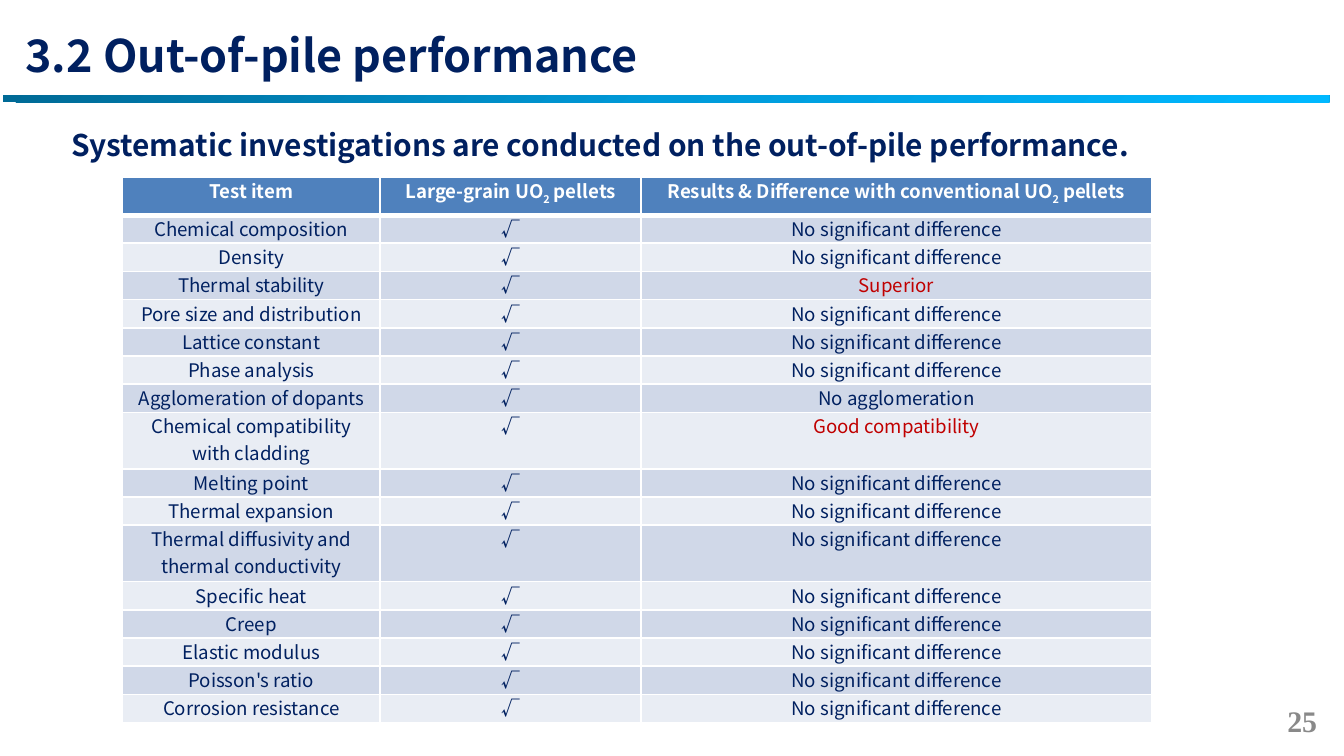
import pptx
import pptx.util
import pptx.dml.color
import pptx.enum.shapes
import pptx.enum.text
import pptx.oxml.ns
from lxml import etree

Inches = pptx.util.Inches
Pt = pptx.util.Pt
qn = pptx.oxml.ns.qn
ALIGN = pptx.enum.text.PP_ALIGN
ANCHOR = pptx.enum.text.MSO_ANCHOR

TITLE = "3.2 Out-of-pile performance"
SUBTITLE = "Systematic investigations are conducted on the out-of-pile performance."
PAGE_NUMBER = "25"
HEADERS = [
    ["Test item"],
    ["Large-grain UO", "2", " pellets"],
    ["Results & Difference with conventional UO", "2", " pellets"],
]
CHECK = "√"
SAME = "No significant difference"
RESULTS = [
    ("Chemical composition", SAME),
    ("Density", SAME),
    ("Thermal stability", "Superior"),
    ("Pore size and distribution", SAME),
    ("Lattice constant", SAME),
    ("Phase analysis", SAME),
    ("Agglomeration of dopants", "No agglomeration"),
    ("Chemical compatibility with cladding", "Good compatibility"),
    ("Melting point", SAME),
    ("Thermal expansion", SAME),
    ("Thermal diffusivity and thermal conductivity", SAME),
    ("Specific heat", SAME),
    ("Creep", SAME),
    ("Elastic modulus", SAME),
    ("Poisson's ratio", SAME),
    ("Corrosion resistance", SAME),
]
HIGHLIGHTS = {"Superior", "Good compatibility"}
SLIDE_WIDTH = 10
SLIDE_HEIGHT = SLIDE_WIDTH * 9 / 16
COLUMN_WIDTHS = [1.92, 1.94, 3.8]
HEADER_HEIGHT, LINE_HEIGHT, LINE_CHARACTERS = 0.28, 0.21, 30

THEME = {
    "font": "Noto Sans CJK SC",
    "number_font": "Times New Roman",
    "title_size": 24,
    "body_size": 16,
    "table_size": 10,
    "navy": "002060",
    "red": "C00000",
    "gray": "898989",
    "white": "FFFFFF",
    "header": "4F81BD",
    "bands": ["D0D8E8", "E9EDF4"],
    "bar": [(0, "006A96"), (50, "009AD9"), (100, "00B8FF")],
}


def color(value):
    return pptx.dml.color.RGBColor.from_string(value)


def style(paragraph, size, fill, bold=False, font=THEME["font"], align=ALIGN.LEFT):
    paragraph.alignment = align
    paragraph.font.size = Pt(size)
    paragraph.font.name = font
    paragraph.font.bold = bold
    paragraph.font.color.rgb = color(fill)
    properties = paragraph.font._element
    etree.SubElement(properties, qn("a:ea")).set("typeface", font)


def add_text(slide, box, text, insets, anchor=ANCHOR.TOP, spacing=None, **look):
    frame = slide.shapes.add_textbox(*map(Inches, box)).text_frame
    frame.word_wrap = True
    frame.vertical_anchor = anchor
    frame.margin_left = frame.margin_right = Inches(insets[0])
    frame.margin_top = frame.margin_bottom = Inches(insets[1])
    paragraph = frame.paragraphs[0]
    paragraph.text = text
    if spacing:
        paragraph.line_spacing = spacing
    style(paragraph, **look)


def add_bar(slide):
    shape = slide.shapes.add_shape(
        pptx.enum.shapes.MSO_SHAPE.RECTANGLE, *map(Inches, (0.02, 0.71, 9.87, 0.05)))
    shape.shadow.inherit = False
    shape.line.fill.background()
    shape.fill.gradient()
    gradient = shape._element.spPr.find(qn("a:gradFill"))
    stops = gradient.find(qn("a:gsLst"))
    for stop in list(stops):
        stops.remove(stop)
    for position, value in THEME["bar"]:
        stop = etree.SubElement(stops, qn("a:gs"), pos=str(position * 1000))
        etree.SubElement(stop, qn("a:srgbClr"), val=value)
    gradient.find(qn("a:lin")).set("ang", str(45 * 60000))


def add_borders(cell, top, bottom):
    properties = cell._tc.get_or_add_tcPr()
    for side, width in (("L", 1), ("R", 1), ("T", top), ("B", bottom)):
        line = etree.SubElement(properties, qn("a:ln" + side), w=str(Pt(width)))
        fill = etree.SubElement(line, qn("a:solidFill"))
        etree.SubElement(fill, qn("a:srgbClr"), val=THEME["white"])


def fill_cell(cell, runs, background, text_color, bold, top=1, bottom=1):
    cell.margin_left = cell.margin_right = Inches(0.07)
    cell.margin_top = cell.margin_bottom = 0
    add_borders(cell, top, bottom)
    cell.fill.solid()
    cell.fill.fore_color.rgb = color(background)
    paragraph = cell.text_frame.paragraphs[0]
    for index, text in enumerate(runs):
        run = paragraph.add_run()
        run.text = text
        if index == 1:
            run.font._element.set("baseline", "-25000")
    style(paragraph, THEME["table_size"], text_color, bold, align=ALIGN.CENTER)


def add_results(slide):
    heights = [HEADER_HEIGHT] + [
        LINE_HEIGHT * (2 if len(item) > LINE_CHARACTERS else 1) for item, _ in RESULTS]
    table = slide.shapes.add_table(
        len(heights), len(COLUMN_WIDTHS), Inches(0.91), Inches(1.32),
        Inches(sum(COLUMN_WIDTHS)), Inches(sum(heights))).table
    for column, width in zip(table.columns, COLUMN_WIDTHS):
        column.width = Inches(width)
    for row, height in zip(table.rows, heights):
        row.height = Inches(height)
    for index, runs in enumerate(HEADERS):
        fill_cell(table.cell(0, index), runs, THEME["header"], THEME["white"], True, bottom=3)
    for number, (item, result) in enumerate(RESULTS, 1):
        background = THEME["bands"][(number - 1) % 2]
        for index, text in enumerate((item, CHECK, result)):
            text_color = THEME["red" if text in HIGHLIGHTS else "navy"]
            fill_cell(table.cell(number, index), [text], background, text_color,
                      text == CHECK, top=3 if number == 1 else 1)


def main():
    presentation = pptx.Presentation()
    presentation.slide_width = Inches(SLIDE_WIDTH)
    presentation.slide_height = Inches(SLIDE_HEIGHT)
    slide = presentation.slides.add_slide(presentation.slide_layouts[6])
    add_bar(slide)
    add_text(slide, (7.54, 5.21, 2.33, 0.3), PAGE_NUMBER, (0.07, 0.04), ANCHOR.MIDDLE,
             size=THEME["body_size"], fill=THEME["gray"], bold=True,
             font=THEME["number_font"], align=ALIGN.RIGHT)
    add_text(slide, (0.43, 0.84, 8.68, 0.42), SUBTITLE, (0.1, 0.05), spacing=1.2,
             size=THEME["body_size"], fill=THEME["navy"], bold=True)
    add_text(slide, (0.08, 0.16, 8.27, 0.51), TITLE, (0.11, 0.05),
             size=THEME["title_size"], fill=THEME["navy"], bold=True)
    add_results(slide)
    presentation.save("out.pptx")


if __name__ == "__main__":
    main()
